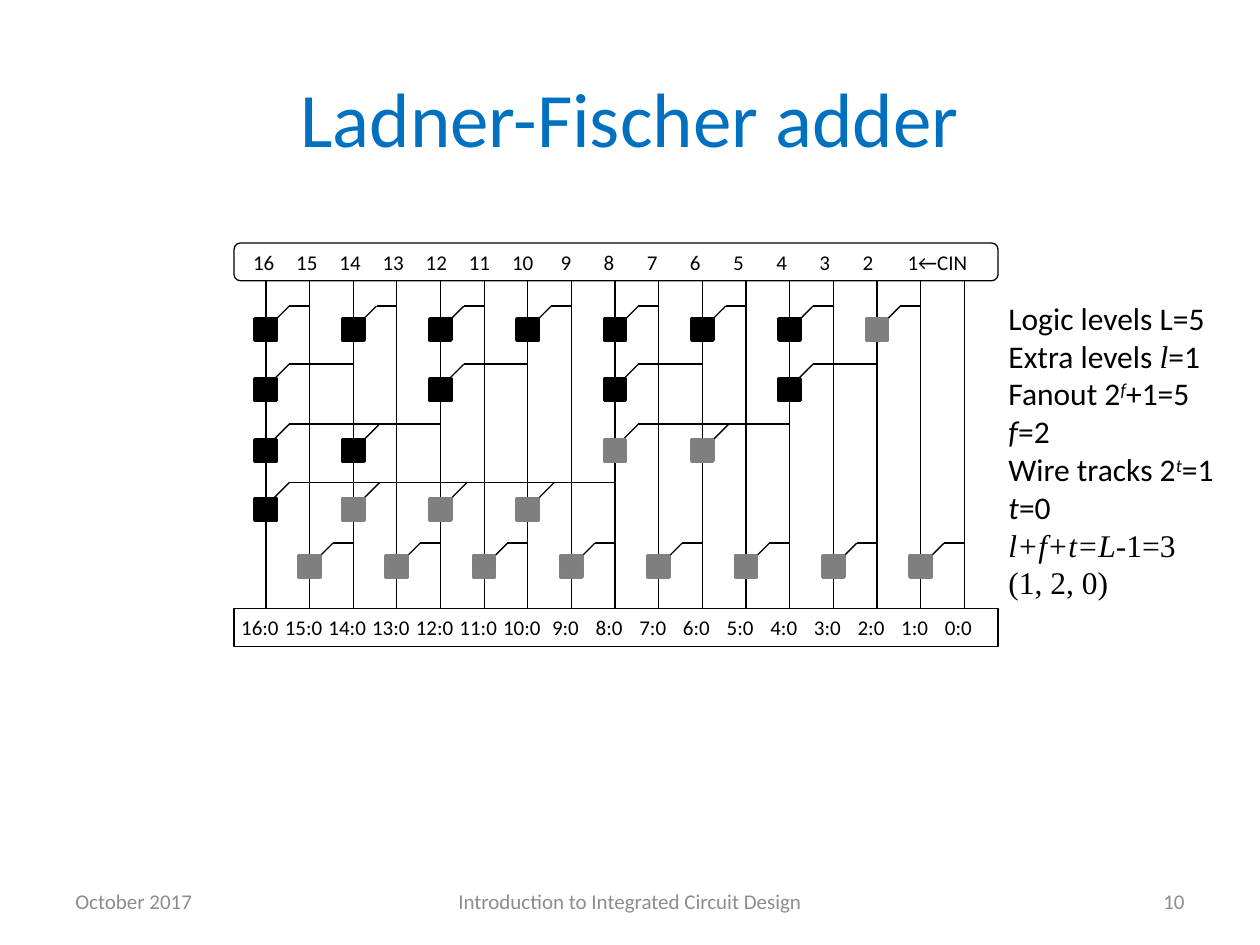
import pptx
import pptx.dml.color
import pptx.enum.shapes
import pptx.enum.text
import pptx.oxml.ns
import pptx.util
from lxml import etree

Cm = pptx.util.Cm
Pt = pptx.util.Pt
SHAPE = pptx.enum.shapes.MSO_SHAPE
ALIGN = pptx.enum.text.PP_ALIGN
ANCHOR = pptx.enum.text.MSO_ANCHOR
qn = pptx.oxml.ns.qn

COLORS = {
    "title": "0070C0",
    "footer": "8C8C8C",
    "ink": "000000",
    "paper": "FFFFFF",
    "gray": "7F7F7F",
    "gray_edge": "808080",
}
SANS, SERIF = "Calibri", "Times New Roman"
TOP_BIT = 16
FIRST_WIRE, WIRE_PITCH = 5.36, 0.88
CELL_SIZE = 0.43
BAR_LEFT, BAR_WIDTH, BAR_HEIGHT = 4.72, 15.4, 0.76

LEVELS = [
    (6.17, 6.64, [(bit, bit - 1, bit > 2) for bit in range(16, 0, -2)]),
    (7.34, 7.86, [(bit, bit - 2, True) for bit in range(16, 0, -4)]),
    (8.55, 9.08, [(16, 12, True), (14, None, True), (8, 4, False), (6, None, False)]),
    (9.73, 10.27, [(16, 8, True)] + [(bit, None, False) for bit in (14, 12, 10)]),
    (10.95, 11.42, [(bit, bit - 1, False) for bit in range(15, 0, -2)]),
]

NOTES = [
    [("Logic levels L=5", "")],
    [("Extra levels ", ""), ("l", "serif italic"), ("=1", "")],
    [("Fanout 2", ""), ("f", "italic super"), ("+1=5", "")],
    [("f", "italic"), ("=2", "")],
    [("Wire tracks 2", ""), ("t", "italic super"), ("=1", "")],
    [("t", "italic"), ("=0", "")],
    [("l+f+t=L", "serif italic"), ("-1=3", "serif")],
    [("(1, 2, 0)", "serif")],
]


def rgb(name):
    return pptx.dml.color.RGBColor.from_string(COLORS[name])


def apply_format(target, values):
    for attribute, value in values.items():
        setattr(target, attribute, value)


def add_run(paragraph, text, size, color, style=""):
    run = paragraph.add_run()
    run.text = text
    apply_format(run.font, {
        "name": SERIF if "serif" in style else SANS,
        "size": Pt(size),
        "italic": "italic" in style,
    })
    run.font.color.rgb = rgb(color)
    if "super" in style:
        run.font._element.set("baseline", "30000")


def add_text(slide, box, paragraphs, size, color, align=ALIGN.LEFT, anchor=ANCHOR.MIDDLE):
    frame = slide.shapes.add_textbox(*map(Cm, box)).text_frame
    apply_format(frame, {"word_wrap": True, "vertical_anchor": anchor})
    for index, runs in enumerate(paragraphs):
        paragraph = frame.add_paragraph() if index else frame.paragraphs[0]
        paragraph.alignment = align
        for text, style in runs:
            add_run(paragraph, text, size, color, style)


def add_line(slide, *ends):
    line = slide.shapes.add_connector(
        pptx.enum.shapes.MSO_CONNECTOR.STRAIGHT, *map(Cm, ends))
    line.line.width = Pt(0.75)
    line.line.color.rgb = rgb("ink")
    etree.SubElement(line._element.spPr, qn("a:effectLst"))


def add_block(slide, kind, box, fill, edge, width):
    block = slide.shapes.add_shape(kind, *map(Cm, box))
    block.shadow.inherit = False
    block.fill.solid()
    block.fill.fore_color.rgb = rgb(fill)
    block.line.color.rgb = rgb(edge)
    block.line.width = Pt(width)
    return block


def wire_x(bit):
    return FIRST_WIRE + (TOP_BIT - bit) * WIRE_PITCH


def add_cell(slide, branch_y, center_y, bit, source, black):
    x = wire_x(bit)
    bend = x + (0.53 if source is None else 0.47)
    add_line(slide, bend, branch_y, bend - 0.5, branch_y + 0.5)
    if source is not None:
        add_line(slide, wire_x(source), branch_y, bend, branch_y)
    fill, edge = ("ink", "ink") if black else ("gray", "gray_edge")
    box = (x - CELL_SIZE / 2, center_y - CELL_SIZE / 2, CELL_SIZE, CELL_SIZE)
    add_block(slide, SHAPE.RECTANGLE, box, fill, edge, 2)


def add_bar(slide, kind, top, labels, stops):
    inset = 0.05
    bar = add_block(slide, kind, (BAR_LEFT, top, BAR_WIDTH, BAR_HEIGHT), "paper", "ink", 0.75)
    frame = bar.text_frame
    apply_format(frame, {
        "margin_left": Cm(inset), "margin_right": Cm(inset),
        "margin_top": Cm(0.1), "margin_bottom": Cm(0.1),
        "word_wrap": True, "vertical_anchor": ANCHOR.MIDDLE,
    })
    paragraph = frame.paragraphs[0]
    paragraph.alignment = ALIGN.LEFT
    tabs = etree.SubElement(paragraph._p.get_or_add_pPr(), qn("a:tabLst"))
    for x, align in stops:
        etree.SubElement(tabs, qn("a:tab"), pos=str(int(Cm(x - BAR_LEFT - inset))), algn=align)
    add_run(paragraph, "".join("\t" + label for label in labels), 12, "ink")


def add_adder(slide):
    for bit in range(TOP_BIT, -1, -1):
        add_line(slide, wire_x(bit), 5.23, wire_x(bit), 12.93)
    for branch_y, center_y, cells in LEVELS:
        for cell in cells:
            add_cell(slide, branch_y, center_y, *cell)

    inputs = [str(bit) for bit in range(TOP_BIT, 1, -1)] + ["1←CIN"]
    input_stops = [(5.28 + 0.87 * i, "ctr") for i in range(15)] + [(18.26, "l")]
    add_bar(slide, SHAPE.FLOWCHART_ALTERNATE_PROCESS, 4.9, inputs, input_stops)

    outputs = [f"{bit}:0" for bit in range(TOP_BIT, -1, -1)]
    output_stops = [(5.24 + 0.88 * i, "ctr") for i in range(17)]
    add_bar(slide, SHAPE.RECTANGLE, 12.27, outputs, output_stops)


def main():
    deck = pptx.Presentation()
    apply_format(deck, {"slide_width": Cm(25.4), "slide_height": Cm(19.05)})
    slide = deck.slides.add_slide(deck.slide_layouts[6])

    add_text(slide, (1.27, 0.76, 22.86, 3.18), [[("Ladner-Fischer adder", "")]],
             44, "title", ALIGN.CENTER)
    footers = [
        (1.27, 5.92, "October 2017", ALIGN.LEFT),
        (8.68, 8.04, "Introduction to Integrated Circuit Design", ALIGN.CENTER),
        (18.21, 5.92, "10", ALIGN.RIGHT),
    ]
    for left, width, text, align in footers:
        add_text(slide, (left, 17.66, width, 1.01), [[(text, "")]], 12, "footer", align)

    add_adder(slide)
    add_text(slide, (20.08, 5.9, 4.75, 7.19), NOTES, 18, "ink", anchor=ANCHOR.TOP)
    deck.save("out.pptx")


if __name__ == "__main__":
    main()
